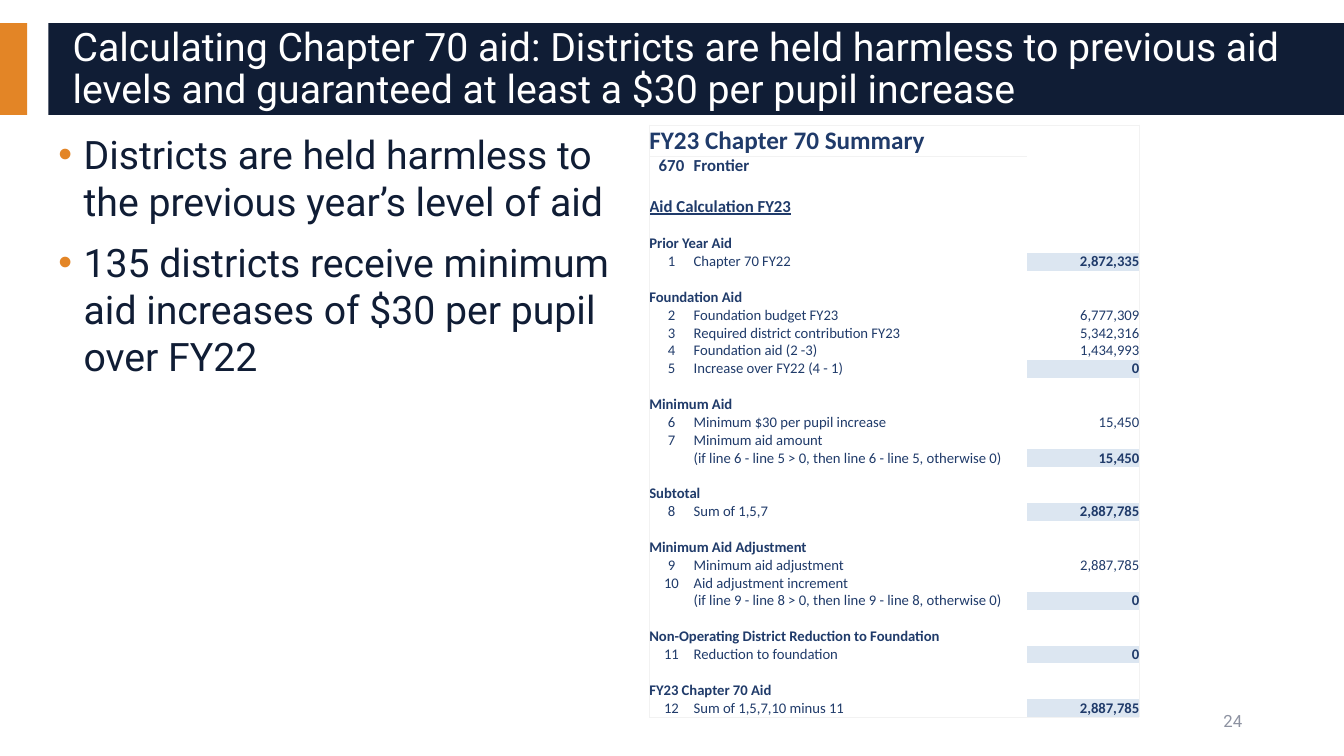
import pptx
import pptx.dml.color
import pptx.enum.shapes
import pptx.enum.text
import pptx.oxml
import pptx.oxml.ns
import pptx.util
from pptx.util import Inches

NAVY, ORANGE, WHITE = "101D35", "E38526", "FFFFFF"
TABLE_BLUE, HIGHLIGHT, BORDER, GRAY = "203B6A", "DCE6F1", "F2F2F2", "8D92A1"
ALIGN = pptx.enum.text.PP_ALIGN
MIDDLE = pptx.enum.text.MSO_ANCHOR.MIDDLE
NO_GRID_STYLE = "{2D5ABB26-0587-4C30-8999-92F81FD0307C}"

TITLE = ("Calculating Chapter 70 aid: Districts are held harmless to previous aid "
         "levels and guaranteed at least a $30 per pupil increase")
BULLETS = [
    "Districts are held harmless to the previous year’s level of aid",
    "135 districts receive minimum aid increases of $30 per pupil over FY22",
]
# Each section: heading, then lines of number, label, amount, amount is highlighted
SECTIONS = [
    ("Prior Year Aid", [("1", "Chapter 70 FY22", "2,872,335", True)]),
    ("Foundation Aid", [
        ("2", "Foundation budget FY23", "6,777,309", False),
        ("3", "Required district contribution FY23", "5,342,316", False),
        ("4", "Foundation aid (2 -3)", "1,434,993", False),
        ("5", "Increase over FY22 (4 - 1)", "0", True)]),
    ("Minimum Aid", [
        ("6", "Minimum $30 per pupil increase", "15,450", False),
        ("7", "Minimum aid amount", "", False),
        ("", "(if line 6 - line 5 > 0, then line 6 - line 5, otherwise 0)", "15,450", True)]),
    ("Subtotal", [("8", "Sum of 1,5,7", "2,887,785", True)]),
    ("Minimum Aid Adjustment", [
        ("9", "Minimum aid adjustment", "2,887,785", False),
        ("10", "Aid adjustment increment", "", False),
        ("", "(if line 9 - line 8 > 0, then line 9 - line 8, otherwise 0)", "0", True)]),
    ("Non-Operating District Reduction to Foundation",
     [("11", "Reduction to foundation", "0", True)]),
    ("FY23 Chapter 70 Aid", [("12", "Sum of 1,5,7,10 minus 11", "2,887,785", True)]),
]


def rgb(color):
    return pptx.dml.color.RGBColor.from_string(color)


def place(shape, left, top, width, height):
    shape.left, shape.top = Inches(left), Inches(top)
    shape.width, shape.height = Inches(width), Inches(height)


def style_runs(paragraph, size, color, font="Roboto", bold=False, underline=False):
    for run in paragraph.runs:
        run.font.size = pptx.util.Pt(size)
        run.font.name = font
        run.font.bold = bold
        run.font.underline = underline
        run.font.color.rgb = rgb(color)


def add_bar(slide, left, width, color):
    bar = slide.shapes.add_shape(pptx.enum.shapes.MSO_SHAPE.RECTANGLE, Inches(left),
                                 Inches(0.23), Inches(width), Inches(0.91))
    bar.shadow.inherit = False
    bar.fill.solid()
    bar.fill.fore_color.rgb = rgb(color)
    bar.line.fill.background()


def fill_title(title):
    place(title, 0.62, 0.32, 12.5, 0.74)
    frame = title.text_frame
    frame.text = TITLE
    frame.word_wrap = True
    frame.auto_size = pptx.enum.text.MSO_AUTO_SIZE.NONE
    frame.vertical_anchor = MIDDLE
    paragraph = frame.paragraphs[0]
    paragraph.alignment = ALIGN.LEFT
    paragraph.line_spacing = 0.9
    style_runs(paragraph, 28, WHITE)


def set_bullet(paragraph, color):
    properties = paragraph._p.get_or_add_pPr()
    properties.set("marL", str(Inches(0.25)))
    properties.set("indent", str(-Inches(0.25)))
    namespace = pptx.oxml.ns.nsdecls("a")
    for xml in (f'<a:buClr {namespace}><a:srgbClr val="{color}"/></a:buClr>',
                f'<a:buFont {namespace} typeface="Arial"/>',
                f'<a:buChar {namespace} char="•"/>'):
        properties.append(pptx.oxml.parse_xml(xml))


def fill_bullets(body):
    place(body, 0.48, 1.24, 5.96, 5.31)
    frame = body.text_frame
    frame.text = "\n".join(BULLETS)
    frame.word_wrap = True
    frame.auto_size = pptx.enum.text.MSO_AUTO_SIZE.NONE
    for paragraph in frame.paragraphs:
        paragraph.space_before = pptx.util.Pt(10)
        set_bullet(paragraph, ORANGE)
        style_runs(paragraph, 28, NAVY)


def add_page_number(slide):
    box = slide.shapes.add_textbox(Inches(9.42), Inches(6.95), Inches(3), Inches(0.4))
    frame = box.text_frame
    frame.word_wrap = True
    frame.vertical_anchor = MIDDLE
    frame.text = "24"
    frame.paragraphs[0].alignment = ALIGN.RIGHT
    style_runs(frame.paragraphs[0], 12, GRAY)


def table_rows():
    """List each row as its three texts, text size, bold and highlight flags."""
    rows = [
        (("FY23 Chapter 70 Summary", "", ""), 18, True, False),
        (("670", "Frontier", ""), 12, True, False),
        (("", "", ""), 12, False, False),
        (("Aid Calculation FY23", "", ""), 12, True, False),
    ]
    for heading, lines in SECTIONS:
        rows.append((("", "", ""), 10.5, False, False))
        rows.append(((heading, "", ""), 10.5, True, False))
        rows += [((number, label, amount), 10.5, False, highlight)
                 for number, label, amount, highlight in lines]
    return rows


def set_borders(cell, sides):
    properties = cell._tc.get_or_add_tcPr()
    for side in "LRTB":
        if side in sides:
            properties.append(pptx.oxml.parse_xml(
                f'<a:ln{side} {pptx.oxml.ns.nsdecls("a")} w="3175"><a:solidFill>'
                f'<a:srgbClr val="{BORDER}"/></a:solidFill></a:ln{side}>'))


def fill_cell(cell, text, size, bold, alignment, color, underline=False):
    cell.margin_left = cell.margin_right = cell.margin_top = cell.margin_bottom = 0
    cell.vertical_anchor = MIDDLE
    cell.fill.solid()
    cell.fill.fore_color.rgb = rgb(color)
    cell.text_frame.text = text
    paragraph = cell.text_frame.paragraphs[0]
    paragraph.alignment = alignment
    style_runs(paragraph, size, TABLE_BLUE, "Calibri", bold, underline)
    if not text:
        # The end mark sets the height of an empty line
        paragraph._p.append(pptx.oxml.parse_xml(
            f'<a:endParaRPr {pptx.oxml.ns.nsdecls("a")} sz="{int(size * 100)}">'
            '<a:latin typeface="Calibri"/></a:endParaRPr>'))


def add_aid_table(slide):
    rows = table_rows()
    heights = [size * 0.0169 for _, size, _, _ in rows]
    widths = [0.44, 3.31, 1.11]
    frame = slide.shapes.add_table(len(rows), 3, Inches(6.44), Inches(1.24),
                                   Inches(sum(widths)), Inches(sum(heights)))
    table = frame.table
    table.first_row = table.horz_banding = False
    table._tbl.tblPr.find(pptx.oxml.ns.qn("a:tableStyleId")).text = NO_GRID_STYLE
    for column, width in zip(table.columns, widths):
        column.width = Inches(width)
    last = len(rows) - 1
    for index, (texts, size, bold, highlight) in enumerate(rows):
        table.rows[index].height = Inches(heights[index])
        is_heading = bool(texts[0]) and not texts[1]
        alignments = (ALIGN.LEFT if is_heading else ALIGN.CENTER, ALIGN.LEFT, ALIGN.RIGHT)
        for column, text in enumerate(texts):
            cell = table.cell(index, column)
            sides = ("L" if column == 0 else "") + ("R" if column == 2 else "")
            sides += ("T" if index == 0 else "") + ("B" if index == last else "")
            if index == 0 and column < 2:
                sides += "RB" if column else "B"
            set_borders(cell, sides)
            marked = highlight and column == 2
            fill_cell(cell, text, size, bold or marked, alignments[column],
                      HIGHLIGHT if marked else WHITE, text == "Aid Calculation FY23")
        if is_heading:
            table.cell(index, 0).merge(table.cell(index, 1))


def main():
    presentation = pptx.Presentation()
    presentation.slide_width, presentation.slide_height = Inches(13.33), Inches(7.5)
    slide = presentation.slides.add_slide(presentation.slide_layouts[1])
    add_bar(slide, 0, 0.27, ORANGE)
    add_bar(slide, 0.48, 12.85, NAVY)
    title, body = slide.shapes.title, slide.placeholders[1]
    for placeholder in (body, title):
        slide.shapes._spTree.append(placeholder._element)
    fill_title(title)
    fill_bullets(body)
    add_page_number(slide)
    add_aid_table(slide)
    presentation.save("out.pptx")


if __name__ == "__main__":
    main()
